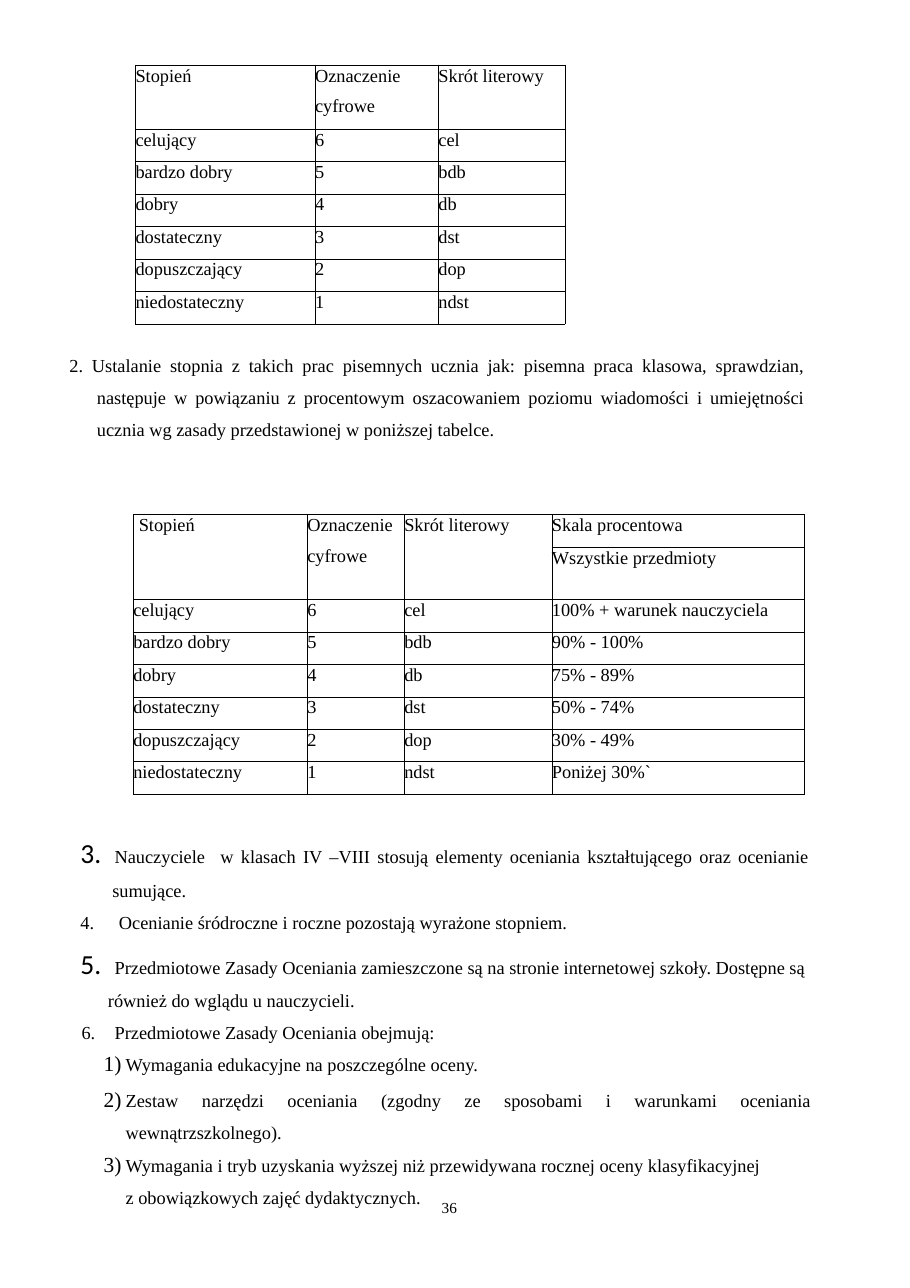
"""Build a page of school grading rules with two grade tables and a numbered list."""
from lxml.etree import SubElement, fromstring
from pptx import Presentation
from pptx.dml.color import RGBColor
from pptx.enum.text import MSO_AUTO_SIZE, PP_ALIGN
from pptx.oxml.ns import nsdecls, qn
from pptx.util import Inches, Pt

BLACK = RGBColor(0, 0, 0)
SERIF = "Times New Roman"
GRADE_HEIGHT = 0.295
GRADES = [
    ("celujący", "6", "cel", "100% + warunek nauczyciela"),
    ("bardzo dobry", "5", "bdb", "90% - 100%"),
    ("dobry", "4", "db", "75% - 89%"),
    ("dostateczny", "3", "dst", "50% - 74%"),
    ("dopuszczający", "2", "dop", "30% - 49%"),
    ("niedostateczny", "1", "ndst", "Poniżej 30%`"),
]
HEADINGS = ("Stopień", "Oznaczenie\ncyfrowe", "Skrót literowy")


def format_paragraph(para, spacing, before, left=0, first=0, right=0, numbering=None, tabs=(), size=12):
    para.line_spacing = spacing
    para.space_before = Pt(before)
    properties = para._p.get_or_add_pPr()
    for name, length in (("marL", left), ("indent", first), ("marR", right)):
        properties.set(name, str(Inches(length)))
    if numbering:
        scheme, start, percent = numbering
        SubElement(properties, qn("a:buSzPct"), val=str(percent * 1000))
        SubElement(properties, qn("a:buAutoNum"), type=scheme, startAt=str(start))
    if tabs:
        stops = SubElement(properties, qn("a:tabLst"))
        for stop in tabs:
            SubElement(stops, qn("a:tab"), pos=str(Inches(stop)), algn="l")
    para.font.name = SERIF
    para.font.size = Pt(size)
    para.font.color.rgb = BLACK


def clear_insets(frame, top=0):
    frame.margin_left = frame.margin_right = frame.margin_bottom = 0
    frame.margin_top = Inches(top)
    frame.word_wrap = True
    frame.auto_size = MSO_AUTO_SIZE.NONE


deck = Presentation()
deck.slide_width = Inches(8.26)
deck.slide_height = Inches(11.69)
page = deck.slides.add_slide(deck.slide_layouts[1])
title = page.shapes.title
title._element.getparent().remove(title._element)

number_box = page.shapes.add_textbox(Inches(1.26), Inches(10.65), Inches(2.93), Inches(0.41))
clear_insets(number_box.text_frame, 0.23)
number_para = number_box.text_frame.paragraphs[0]
number_para.text = "36"
format_paragraph(number_para, Pt(11.9), 0, left=2.75, size=10)

grade_tables = [
    (1.23, 0.59, (1.63, 1.12, 1.15), (0.58,),
     [HEADINGS] + [grade[:3] for grade in GRADES]),
    (1.21, 4.67, (1.58, 0.88, 1.34, 2.29), (0.3, 0.47),
     [HEADINGS + ("Skala procentowa",), ("", "", "", "Wszystkie przedmioty")] + GRADES),
]
for left, top, widths, heading_heights, rows in grade_tables:
    heights = list(heading_heights) + [GRADE_HEIGHT] * len(GRADES)
    table = page.shapes.add_table(
        len(rows), len(widths), Inches(left), Inches(top),
        Inches(sum(widths)), Inches(sum(heights))).table
    table.first_row = table.horz_banding = False
    for column, width in zip(table.columns, widths):
        column.width = Inches(width)
    for row, height in zip(table.rows, heights):
        row.height = Inches(height)
    for row_index, row in enumerate(rows):
        for column_index, text in enumerate(row):
            cell = table.cell(row_index, column_index)
            cell.margin_left = cell.margin_right = cell.margin_top = cell.margin_bottom = 0
            cell.text = text
            for line_index, para in enumerate(cell.text_frame.paragraphs):
                indent = 0.05 if len(widths) == 4 and row_index == column_index == 0 else 0
                format_paragraph(para, Pt(13.8), 6.2 * line_index, left=indent)
            cell.fill.background()
            for position, side in enumerate("LRTB"):
                cell._tc.tcPr.insert(position, fromstring(
                    f'<a:ln{side} {nsdecls("a")} w="{Pt(0.5)}"><a:solidFill>'
                    f'<a:srgbClr val="{BLACK}"/></a:solidFill></a:ln{side}>'))
    if len(heading_heights) == 2:
        for column_index in range(len(HEADINGS)):
            table.cell(0, column_index).merge(table.cell(1, column_index))

rule_box = page.shapes.add_textbox(Inches(0.62), Inches(3.12), Inches(6.78), Inches(0.89))
clear_insets(rule_box.text_frame, 0.01)
rule_para = rule_box.text_frame.paragraphs[0]
rule_para.text = (
    "2. Ustalanie stopnia z takich prac pisemnych ucznia jak: pisemna praca klasowa, "
    "sprawdzian, następuje w powiązaniu z procentowym oszacowaniem poziomu wiadomości "
    "i umiejętności ucznia wg zasady przedstawionej w poniższej tabelce.")
format_paragraph(rule_para, 1.44, 1, left=0.26, first=-0.25, right=0.09)
rule_para.alignment = PP_ALIGN.JUSTIFY

MAIN = ("arabicPeriod", 3, 100)
SUB = ("arabicParenR", 1, 117)
LEFT, JUSTIFY = PP_ALIGN.LEFT, PP_ALIGN.JUSTIFY
rules = [
    ("Nauczyciele\tw klasach IV –VIII stosują elementy oceniania kształtującego oraz "
     "ocenianie sumujące.", MAIN, True, JUSTIFY, 1.44, 1, 0.3, -0.29, 0.05, (0.32, 1.28)),
    ("Ocenianie śródroczne i roczne pozostają wyrażone stopniem.",
     MAIN, False, LEFT, 1.0, 6.2, 0.36, -0.35, 0, (0.36,)),
    ("Przedmiotowe Zasady Oceniania zamieszczone są na stronie internetowej szkoły. "
     "Dostępne są również do wglądu u nauczycieli.",
     MAIN, True, LEFT, 1.43, 0.1, 0.26, -0.25, 0, (0.32,)),
    ("Przedmiotowe Zasady Oceniania obejmują:",
     MAIN, False, LEFT, 1.0, 6.3, 0.32, -0.3, 0, (0.32,)),
    ("Wymagania edukacyjne na poszczególne oceny.",
     SUB, False, LEFT, 1.0, 6.2, 0.42, -0.2, 0, (0.42,)),
    ("Zestaw narzędzi oceniania (zgodny ze sposobami i warunkami oceniania "
     "wewnątrzszkolnego).", SUB, False, JUSTIFY, Pt(20.6), 3.2, 0.42, -0.2, 0.03, (0.42,)),
    ("Wymagania i tryb uzyskania wyższej niż przewidywana rocznej oceny klasyfikacyjnej "
     "z obowiązkowych zajęć dydaktycznych.",
     SUB, False, LEFT, Pt(20.6), 1.4, 0.42, -0.2, 0.45, (0.42,)),
]
rule_list = page.placeholders[1]
rule_list.left, rule_list.top = Inches(0.72), Inches(7.45)
rule_list.width, rule_list.height = Inches(6.68), Inches(3.27)
list_frame = rule_list.text_frame
clear_insets(list_frame, 0.01)
for index, (text, numbering, large, align, spacing, before, left, first, right, tabs) in enumerate(rules):
    para = list_frame.add_paragraph() if index else list_frame.paragraphs[0]
    para.level = 1 if numbering == SUB else 0
    para.alignment = align
    if large:
        lead = para.add_run()
        lead.text = "\t"
        lead.font.name = "Calibri"
        lead.font.size = Pt(18)
    span = para.add_run()
    span.text = text
    format_paragraph(para, spacing, before, left, first, right, numbering, tabs)

deck.save("out.pptx")
